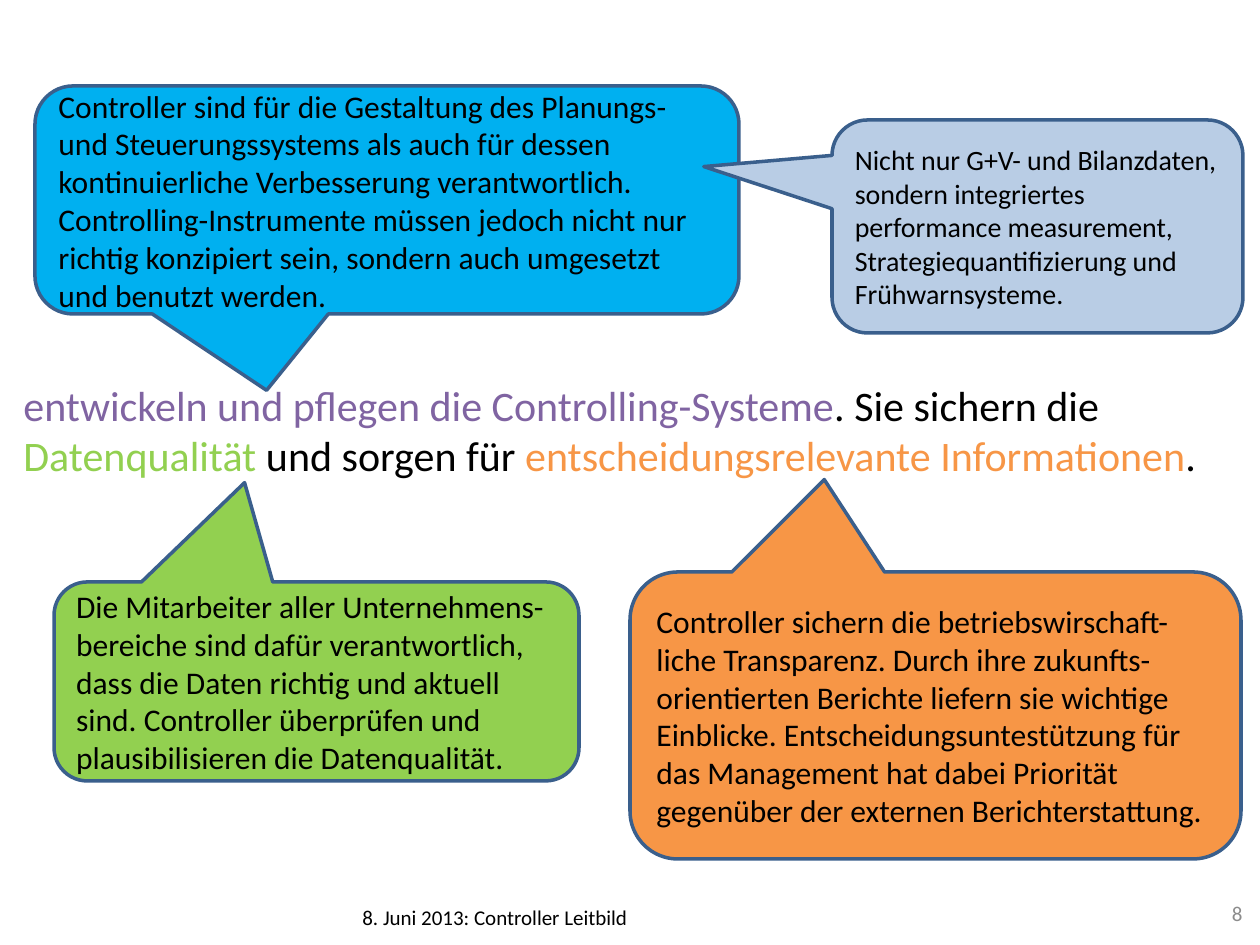
from pptx import Presentation
from pptx.dml.color import RGBColor
from pptx.enum.shapes import MSO_SHAPE
from pptx.enum.text import MSO_ANCHOR, PP_ALIGN
from pptx.util import Pt

EMU_PER_PX = 914400 / 126

BLACK = RGBColor(0x00, 0x00, 0x00)
GRAY = RGBColor(0x8C, 0x8C, 0x8C)
PURPLE = RGBColor(0x80, 0x64, 0xA2)
GREEN = RGBColor(0x92, 0xD0, 0x50)
ORANGE = RGBColor(0xF7, 0x96, 0x46)
BLUE = RGBColor(0x00, 0xB0, 0xF0)
PALE_BLUE = RGBColor(0xB9, 0xCD, 0xE5)
OUTLINE = RGBColor(0x3A, 0x5F, 0x8C)

MISSION = [
    ("entwickeln und pflegen die Controlling-Systeme", PURPLE),
    (". Sie sichern die ", BLACK),
    ("Datenqualität", GREEN),
    (" und sorgen für ", BLACK),
    ("entscheidungsrelevante Informationen", ORANGE),
    (".", BLACK),
]

# Area, pointer tip relative to the centre, fill, text size, text
CALLOUTS = [
    ((54, 582, 525, 199), (-0.137, -0.999), GREEN, 18,
     "Die Mitarbeiter aller Unternehmens-bereiche sind dafür verantwortlich, "
     "dass die Daten richtig und aktuell sind. Controller überprüfen und "
     "plausibilisieren die Datenqualität."),
    ((630, 572, 611, 287), (-0.182, -0.822), ORANGE, 18,
     "Controller sichern die betriebswirschaft-liche Transparenz. Durch ihre "
     "zukunfts-orientierten Berichte liefern sie wichtige Einblicke. "
     "Entscheidungsuntestützung für das Management hat dabei Priorität "
     "gegenüber der externen Berichterstattung."),
    ((35, 86, 704, 228), (-0.171, 0.835), BLUE, 18,
     "Controller sind für die Gestaltung des Planungs- und Steuerungssystems "
     "als auch für dessen kontinuierliche Verbesserung verantwortlich. "
     "Controlling-Instrumente müssen jedoch nicht nur richtig konzipiert sein, "
     "sondern auch umgesetzt und benutzt werden."),
    ((832, 120, 411, 213), (-0.812, -0.281), PALE_BLUE, 16,
     "Nicht nur G+V- und Bilanzdaten, sondern integriertes performance "
     "measurement, Strategiequantifizierung und Frühwarnsysteme."),
]


def px(length):
    return round(length * EMU_PER_PX)


class SlideBuilder:
    """Holds the text style and the slide being built."""

    font_name = "Calibri"
    line_width = Pt(2)
    corner = 0.167

    def __init__(self, page):
        self.page = page

    def fill_text(self, box, spans, size, align=PP_ALIGN.LEFT, anchor=MSO_ANCHOR.TOP):
        """Fills the box with one paragraph of (text, colour) spans."""
        frame = box.text_frame
        frame.word_wrap = True
        frame.vertical_anchor = anchor
        para = frame.paragraphs[0]
        para.alignment = align
        for text, color in spans:
            span = para.add_run()
            span.text = text
            span.font.name = self.font_name
            span.font.size = Pt(size)
            span.font.color.rgb = color
        return para

    def text(self, area, spans, size, **placement):
        box = self.page.shapes.add_textbox(*map(px, area))
        return self.fill_text(box, spans, size, **placement)

    def callout(self, area, tip, fill, size, text):
        box = self.page.shapes.add_shape(
            MSO_SHAPE.ROUNDED_RECTANGULAR_CALLOUT, *map(px, area))
        for index, value in enumerate((*tip, self.corner)):
            box.adjustments[index] = value
        box.shadow.inherit = False
        box.fill.solid()
        box.fill.fore_color.rgb = fill
        box.line.color.rgb = OUTLINE
        box.line.width = self.line_width
        self.fill_text(box, [(text, BLACK)], size, anchor=MSO_ANCHOR.MIDDLE)


def main():
    deck = Presentation()
    deck.slide_width = px(1260)
    deck.slide_height = px(945)
    blank_layout = deck.slide_layouts[6]
    builder = SlideBuilder(deck.slides.add_slide(blank_layout))

    builder.text((350, 898, 656, 50),
                 [("8. Juni 2013: Controller Leitbild", BLACK)], 12)
    mission = builder.text((11, 373, 1230, 115), MISSION, 24)
    mission.space_after = Pt(6)
    for callout in CALLOUTS:
        builder.callout(*callout)
    builder.text((1174, 888, 81, 50), [("8", GRAY)], 12,
                 align=PP_ALIGN.RIGHT, anchor=MSO_ANCHOR.MIDDLE)

    deck.save("out.pptx")


if __name__ == "__main__":
    main()
